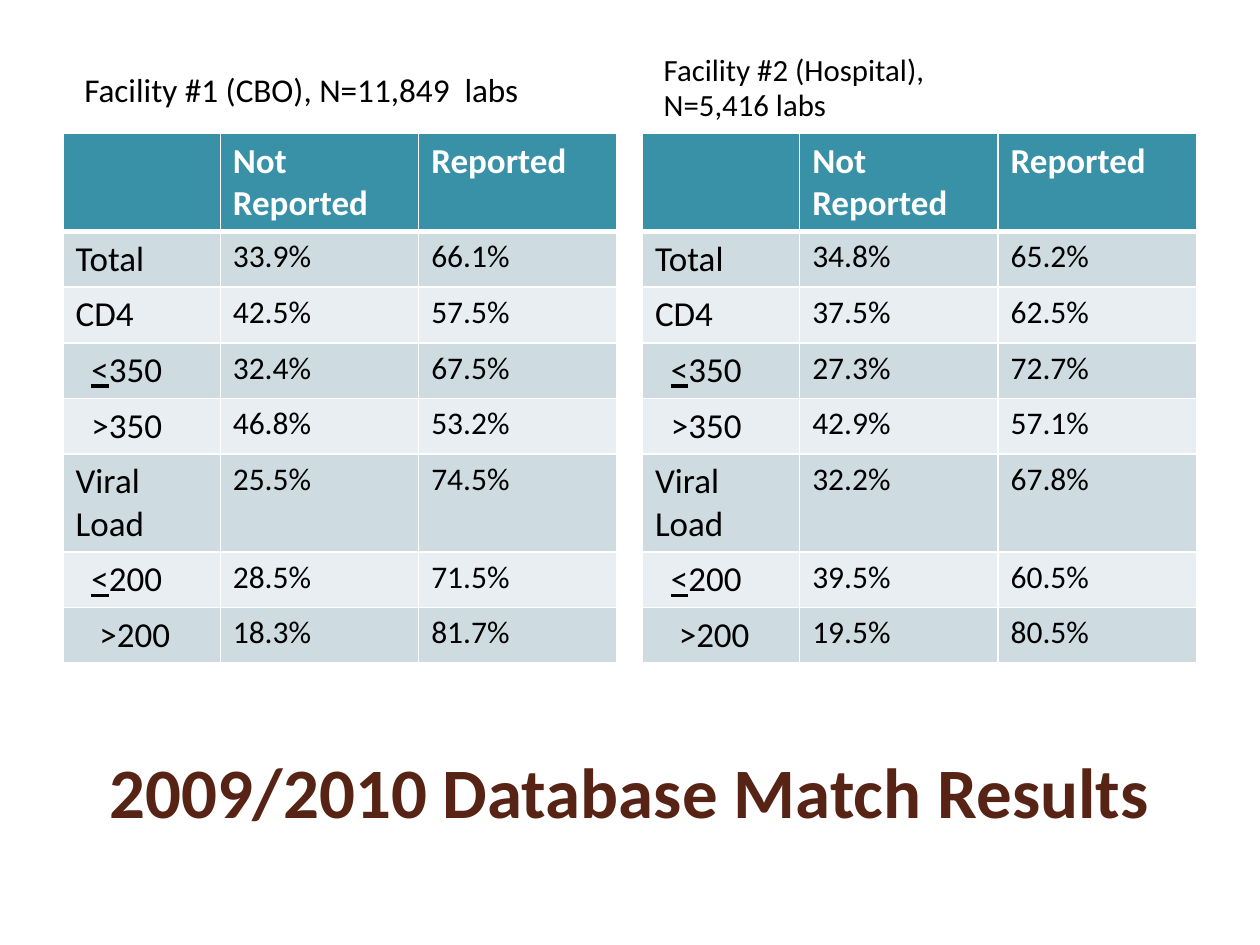
from lxml.etree import SubElement
from pptx import Presentation
from pptx.dml.color import RGBColor
from pptx.enum.shapes import MSO_SHAPE
from pptx.enum.text import MSO_ANCHOR, PP_ALIGN
from pptx.oxml.ns import qn
from pptx.util import Cm, Pt

WHITE, BLACK, BROWN, TEAL = "FFFFFF", "000000", "572314", "3891A7"
BANDS = ["CEDCE1", "E8EEF1"]


def paint(color_format, color):
    color_format.rgb = RGBColor.from_string(color)


def write(frame, text, size, color=BLACK, bold=False, align=PP_ALIGN.LEFT,
          indent=0, spacing=None):
    """Fill a text frame, one paragraph per line; each "<" is underlined."""
    frame.word_wrap = True
    for number, line in enumerate(text.split("\n")):
        paragraph = frame.add_paragraph() if number else frame.paragraphs[0]
        paragraph.alignment = align
        if indent:
            properties = paragraph._p.get_or_add_pPr()
            properties.set("marL", str(Cm(indent)))
            properties.set("indent", "0")
        if spacing:
            paragraph.line_spacing = spacing
        if number:
            paragraph.space_before = Pt(1)
        for part in filter(None, line.partition("<")):
            run = paragraph.add_run()
            run.text = part
            run.font.name = "Calibri"
            run.font.size = Pt(size)
            run.font.bold = bold
            run.font.underline = part == "<"
            paint(run.font.color, color)


presentation = Presentation()
presentation.slide_width, presentation.slide_height = Cm(25.4), Cm(19.05)
slide = presentation.slides.add_slide(presentation.slide_layouts[6])

# Title
title = slide.shapes.add_textbox(Cm(1.27), Cm(14.33), Cm(22.86), Cm(3.18)).text_frame
title.vertical_anchor = MSO_ANCHOR.MIDDLE
write(title, "2009/2010 Database Match Results", size=40.5, color=BROWN, bold=True,
      align=PP_ALIGN.CENTER)

# Row labels with their indents, shared by both facilities
headings = ["", "Not Reported", "Reported"]
labels = [("Total", 0), ("CD4", 0), ("<350", 0.32), (">350", 0.32),
          ("Viral Load", 0), ("<200", 0.32), (">200", 0.48)]
column_widths = [3.17, 4, 4]
single_row, double_row = 1.12, 1.98
row_heights = [double_row] + [double_row if label == "Viral Load" else single_row
                              for label, _ in labels]

facilities = [
    dict(left=1.27, caption="Facility #1 (CBO), N=11,849  labs", size=19, spacing=None,
         shares=[("33.9%", "66.1%"), ("42.5%", "57.5%"), ("32.4%", "67.5%"),
                 ("46.8%", "53.2%"), ("25.5%", "74.5%"), ("28.5%", "71.5%"),
                 ("18.3%", "81.7%")]),
    dict(left=12.95, caption="Facility #2 (Hospital),\nN=5,416 labs", size=17.6, spacing=0.9,
         shares=[("34.8%", "65.2%"), ("37.5%", "62.5%"), ("27.3%", "72.7%"),
                 ("42.9%", "57.1%"), ("32.2%", "67.8%"), ("39.5%", "60.5%"),
                 ("19.5%", "80.5%")]),
]

for facility in facilities:
    left, width = Cm(facility["left"]), Cm(sum(column_widths))

    # Facility caption
    caption = slide.shapes.add_shape(MSO_SHAPE.RECTANGLE, left, Cm(0.91), width, Cm(1.78))
    caption.shadow.inherit = False
    caption.fill.solid()
    paint(caption.fill.fore_color, WHITE)
    paint(caption.line.color, WHITE)
    caption.line.width = Pt(0.85)
    caption.text_frame.vertical_anchor = MSO_ANCHOR.MIDDLE
    write(caption.text_frame, facility["caption"], size=facility["size"], indent=0.18,
          spacing=facility["spacing"])

    # Match results
    results = slide.shapes.add_table(len(row_heights), len(headings), left, Cm(2.69),
                                     width, Cm(sum(row_heights))).table
    for column, column_width in zip(results.columns, column_widths):
        column.width = Cm(column_width)
    for row, row_height in zip(results.rows, row_heights):
        row.height = Cm(row_height)

    rows = [headings] + [(label, *shares) for (label, _), shares
                         in zip(labels, facility["shares"])]
    for r, values in enumerate(rows):
        for c, value in enumerate(values):
            cell = results.cell(r, c)

            # White borders, thicker under the heading row
            thick_side = {0: "B", 1: "T"}.get(r)
            for side in "LRTB":
                border = SubElement(cell._tc.get_or_add_tcPr(), qn(f"a:ln{side}"),
                                    w=str(Pt(3 if side == thick_side else 1)))
                SubElement(SubElement(border, qn("a:solidFill")), qn("a:srgbClr"), val=WHITE)

            cell.fill.solid()
            paint(cell.fill.fore_color, BANDS[(r - 1) % 2] if r else TEAL)
            if r == 0:
                write(cell.text_frame, value, size=20, color=WHITE, bold=True)
            elif c == 0:
                write(cell.text_frame, value, size=20, indent=labels[r - 1][1])
            else:
                write(cell.text_frame, value, size=18)

presentation.save("out.pptx")
